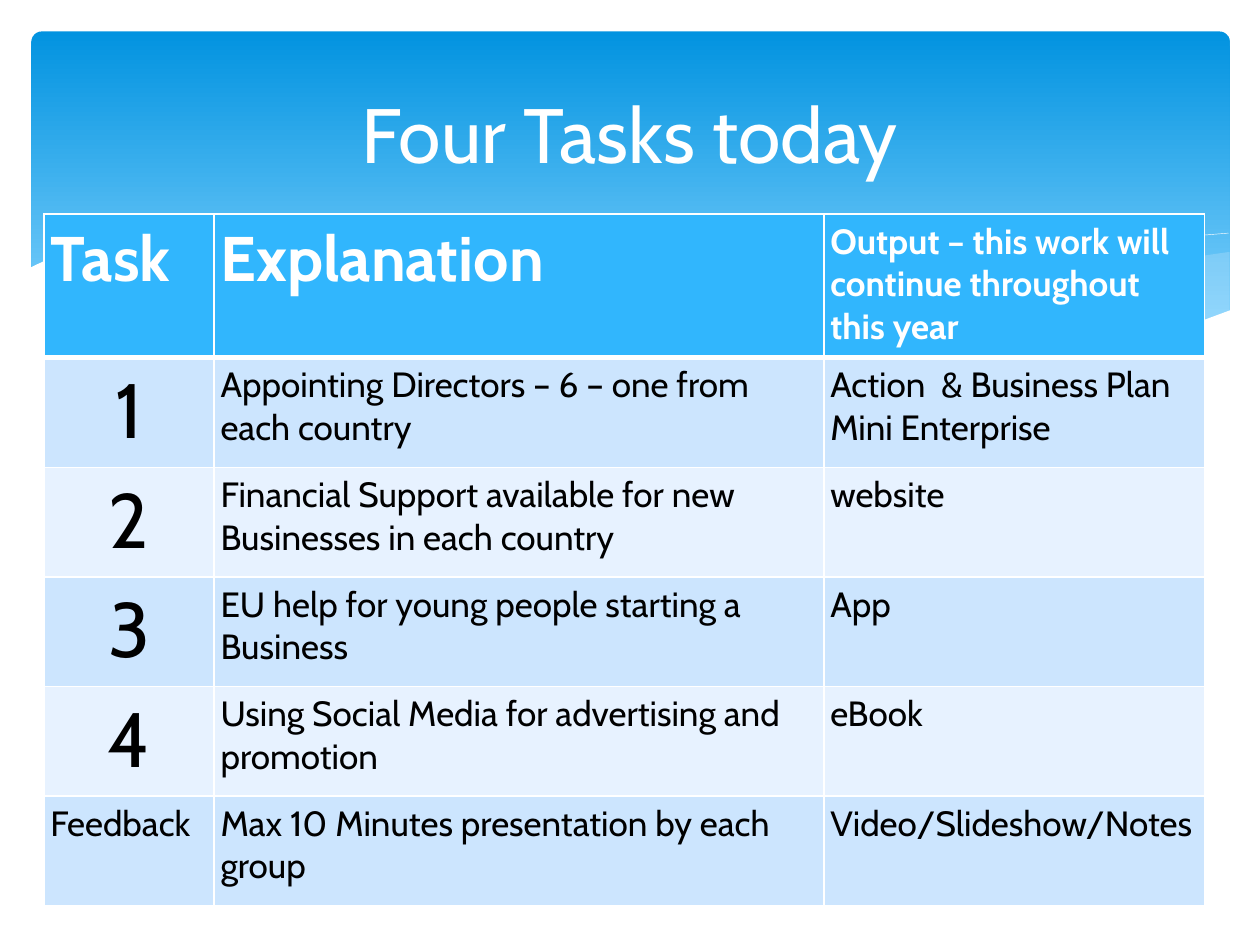
from dataclasses import dataclass

from lxml import etree
from pptx import Presentation
from pptx import util as u
from pptx.dml.color import RGBColor
from pptx.enum import shapes, text
from pptx.oxml.ns import qn


@dataclass(frozen=True)
class Theme:
    font: str = "Cabin"
    white: str = "FFFFFF"
    black: str = "000000"
    sky_top: str = "0293E0"
    sky_bottom: str = "83D3FE"
    wave: str = "C6E7FC"
    header: str = "31B6FD"
    bands: tuple = ("CCE5FE", "E7F2FF")
    title_size: int = 44
    header_size: int = 36
    number_size: int = 44
    body_size: int = 20


THEME = Theme()
INSET = u.Inches(0.05)
MARGINS = dict.fromkeys(
    ("margin_left", "margin_top", "margin_right", "margin_bottom"), INSET)

HEADERS = [("Task", THEME.header_size), ("Explanation", THEME.header_size),
           ("Output – this work will continue throughout this year",
            THEME.body_size)]
TASKS = [
    ("1", "Appointing Directors – 6 – one from each country",
     "Action  & Business Plan\nMini Enterprise"),
    ("2", "Financial Support available for new Businesses in each country",
     "website"),
    ("3", "EU help for young people starting a Business", "App"),
    ("4", "Using Social Media for advertising and promotion", "eBook"),
    ("Feedback", "Max 10 Minutes presentation by each group",
     "Video/Slideshow/Notes"),
]
COL_WIDTHS = (1.35, 4.84, 3.02)
HEADER_HEIGHT, ROW_HEIGHT = 1.14, 0.87

RIGHT_WAVE = [
    (9.75, 2), (9.48, 2.04), (9.06, 2.13), (8.61, 2.23), (8.05, 2.37),
    (7.53, 2.48), (7.06, 2.57), (6.61, 2.65), (6.91, 2.69), (7.32, 2.74),
    (7.69, 2.77), (8.03, 2.78), (8.44, 2.77), (8.72, 2.74), (9.05, 2.69),
    (9.35, 2.62), (9.63, 2.52), (9.76, 2.47), (9.76, 2)]
LONG_WAVE = [
    (8.93, 2.73), (8.37, 2.65), (7.75, 2.54), (7.06, 2.4), (6.29, 2.22),
    (5.69, 2.08), (5.14, 1.98), (4.65, 1.91), (4.2, 1.87), (3.8, 1.85),
    (3.44, 1.86), (3.13, 1.88), (2.86, 1.91), (3.42, 1.99), (4.04, 2.11),
    (4.49, 2.22), (5.3, 2.4), (6.01, 2.55), (6.5, 2.64), (6.95, 2.7),
    (7.48, 2.76), (7.96, 2.78), (8.38, 2.78), (8.67, 2.76)]
LONG_CREST = [
    (3.09, 1.95), (3.28, 1.92), (3.63, 1.89), (4.01, 1.87), (4.5, 1.88),
    (5.1, 1.92), (5.82, 2), (6.36, 2.08), (6.95, 2.19), (7.6, 2.33),
    (8.31, 2.51), (9.07, 2.72)]
RIGHT_CREST = [
    (6.13, 2.57), (6.53, 2.46), (6.95, 2.35), (7.48, 2.23), (8.06, 2.1),
    (8.66, 1.99), (9.1, 1.92), (9.38, 1.88), (9.75, 1.85)]
WHITE_BASE = [
    (9.77, 2.46), (9.5, 2.56), (9.2, 2.65), (8.87, 2.71), (8.5, 2.75),
    (8.09, 2.77), (7.61, 2.75), (7.08, 2.7), (6.47, 2.62), (5.79, 2.5),
    (5.03, 2.33), (4.18, 2.13), (3.65, 2.02), (3.16, 1.94), (2.71, 1.88),
    (2.3, 1.85), (1.93, 1.84), (1.61, 1.84), (1.32, 1.86), (1.06, 1.89),
    (0.85, 1.93), (0.67, 1.97), (0.52, 2.01), (0.4, 2.05), (0.29, 2.1),
    (0.23, 2.13), (0.23, 3.29), (9.77, 3.29)]


def rgb(value):
    return RGBColor.from_string(value)


def set_attrs(obj, values):
    for name, value in values.items():
        setattr(obj, name, value)


def write(p, content, size, color, bold=False, align=None):
    p.text = content
    p.alignment = align
    for r in p.runs:
        set_attrs(r.font, {"name": THEME.font, "size": u.Pt(size),
                           "bold": bold})
        r.font.color.rgb = rgb(color)


def add_sky(s):
    sp = s.shapes.add_shape(
        shapes.MSO_SHAPE.ROUNDED_RECTANGLE,
        *map(u.Inches, (0.25, 0.25, 9.51, 2.7)))
    sp.adjustments[0] = 0.03
    sp.shadow.inherit = False
    sp.line.fill.background()
    sp.fill.gradient()
    sp.fill.gradient_angle = 270
    stops = ((0, THEME.sky_top), (0.9, THEME.sky_bottom))
    for stop, (position, color) in zip(sp.fill.gradient_stops, stops):
        stop.position = position
        stop.color.rgb = rgb(color)


def add_curve(s, points, fill=None, opacity=100):
    """Draw a filled wave, or a thin white crest when no fill is given."""
    first, *rest = [tuple(map(u.Inches, point)) for point in points]
    builder = s.shapes.build_freeform(*first)
    builder.add_line_segments(rest, close=fill is not None)
    sp = builder.convert_to_shape()
    sp.shadow.inherit = False
    if fill is None:
        sp.fill.background()
        sp.line.color.rgb = rgb(THEME.white)
        sp.line.width = u.Pt(0.25)
        return
    sp.line.fill.background()
    sp.fill.solid()
    sp.fill.fore_color.rgb = rgb(fill)
    if opacity < 100:
        color = sp.fill._xPr.find(f".//{qn('a:srgbClr')}")
        etree.SubElement(color, qn("a:alpha"), val=str(opacity * 1000))


def add_title(s, content):
    sp = s.shapes.add_textbox(*map(u.Inches, (0.5, 0.37, 9, 1.37)))
    tf = sp.text_frame
    set_attrs(tf, {**MARGINS, "word_wrap": True,
                   "vertical_anchor": text.MSO_ANCHOR.MIDDLE})
    write(tf.paragraphs[0], content, THEME.title_size, THEME.white,
          align=text.PP_ALIGN.CENTER)


def set_borders(cell, top=1, bottom=1):
    tc_pr = cell._tc.get_or_add_tcPr()
    widths = {"lnL": 1, "lnR": 1, "lnT": top, "lnB": bottom}
    for i, (side, width) in enumerate(widths.items()):
        ln = etree.Element(qn(f"a:{side}"), w=str(u.Pt(width)))
        fill = etree.SubElement(ln, qn("a:solidFill"))
        etree.SubElement(fill, qn("a:srgbClr"), val=THEME.white)
        tc_pr.insert(i, ln)


def fill_cell(cell, content, fill, size, color, **style):
    set_attrs(cell, MARGINS)
    cell.fill.solid()
    cell.fill.fore_color.rgb = rgb(fill)
    write(cell.text_frame.paragraphs[0], content, size, color, **style)


def add_task_table(s):
    heights = [HEADER_HEIGHT] + [ROW_HEIGHT] * len(TASKS)
    table = s.shapes.add_table(
        len(heights), len(COL_WIDTHS), u.Inches(0.35), u.Inches(1.7),
        u.Inches(sum(COL_WIDTHS)), u.Inches(sum(heights))).table
    for column, width in zip(table.columns, COL_WIDTHS):
        column.width = u.Inches(width)
    for row, height in zip(table.rows, heights):
        row.height = u.Inches(height)

    for c, (content, size) in enumerate(HEADERS):
        cell = table.cell(0, c)
        fill_cell(cell, content, THEME.header, size, THEME.white, bold=True)
        set_borders(cell, bottom=3)
    for r, task in enumerate(TASKS, 1):
        for c, content in enumerate(task):
            number = content.isdigit()
            cell = table.cell(r, c)
            fill_cell(cell, content, THEME.bands[(r - 1) % 2],
                      THEME.number_size if number else THEME.body_size,
                      THEME.black,
                      align=text.PP_ALIGN.CENTER if number else None)
            set_borders(cell, top=3 if r == 1 else 1)


def main():
    prs = Presentation()
    prs.slide_width, prs.slide_height = u.Inches(10), u.Inches(7.5)
    s = prs.slides.add_slide(prs.slide_layouts[6])
    add_sky(s)
    add_curve(s, RIGHT_WAVE, THEME.wave, 29)
    add_curve(s, LONG_WAVE, THEME.wave, 40)
    add_curve(s, LONG_CREST)
    add_curve(s, RIGHT_CREST)
    add_curve(s, WHITE_BASE, THEME.white)
    add_title(s, "Four Tasks today")
    add_task_table(s)
    prs.save("out.pptx")


if __name__ == "__main__":
    main()
